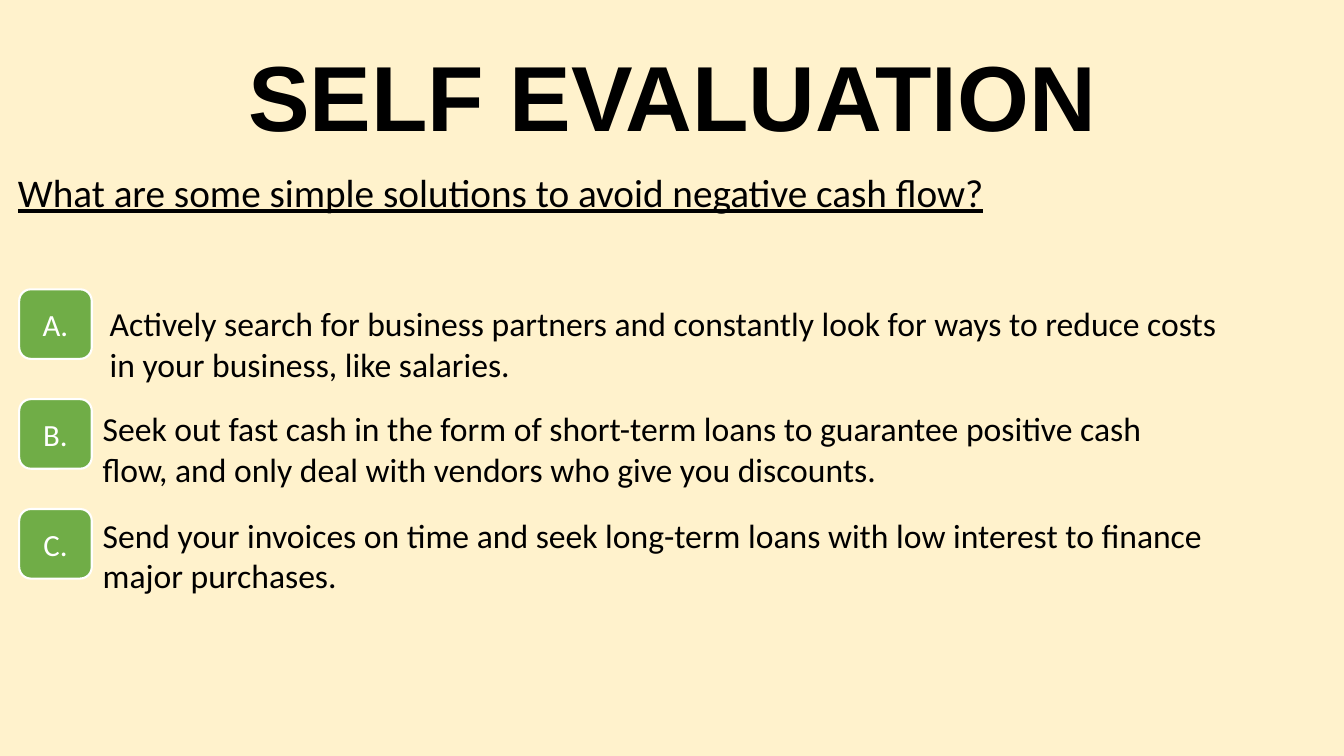
from pptx import Presentation
from pptx.dml.color import RGBColor
from pptx.enum.shapes import MSO_SHAPE
from pptx.enum.text import MSO_ANCHOR, MSO_AUTO_SIZE, PP_ALIGN
from pptx.util import Inches, Pt

CREAM = RGBColor(0xFF, 0xF2, 0xCC)
GREEN = RGBColor(0x70, 0xAD, 0x47)
WHITE = RGBColor(0xFF, 0xFF, 0xFF)
BLACK = RGBColor(0x00, 0x00, 0x00)

ROUND = MSO_SHAPE.ROUNDED_RECTANGLE
TOP, MIDDLE = MSO_ANCHOR.TOP, MSO_ANCHOR.MIDDLE
LEFT, CENTER = PP_ALIGN.LEFT, PP_ALIGN.CENTER
FIXED = MSO_AUTO_SIZE.NONE

# Grid of the answers, in inches
WIDE, HIGH = 13.33, 7.5
FIRST, PITCH = 2.87, 1.09
BADGE = (0.72, 0.69)
EDGE, TALL = 0.92, 0.91

# Letter, left and top shift from the grid, width, wording
ANSWERS = [
    ("A.", 0.07, 0.09, 11.43,
     "Actively search for business partners and constantly look for ways "
     "to reduce costs in your business, like salaries."),
    ("B.", 0, 0.04, 11.07,
     "Seek out fast cash in the form of short-term loans to guarantee "
     "positive cash flow, and only deal with vendors who give you discounts."),
    ("C.", 0, 0.01, 11.72,
     "Send your invoices on time and seek long-term loans with low interest "
     "to finance major purchases."),
]


def write(shape, text, size, color=BLACK, face="Calibri", align=LEFT,
          anchor=TOP):
    """Set the text of a shape and return its run's font."""
    frame = shape.text_frame
    frame.text = text
    frame.word_wrap = True
    frame.auto_size = FIXED
    frame.vertical_anchor = anchor
    para = frame.paragraphs[0]
    para.alignment = align
    font = para.runs[0].font
    font.name, font.size = face, Pt(size)
    font.color.rgb = color
    return font


def add_title(slide, text):
    title = slide.shapes.title
    title.left, title.top = Inches(EDGE), Inches(0.46)
    title.width, title.height = Inches(11.5), Inches(1.45)
    font = write(title, text, 66, face="Arial", align=CENTER)
    font.bold = True
    title.text_frame.paragraphs[0].line_spacing = 0.9


def add_text(slide, box, text, size):
    shape = slide.shapes.add_textbox(*map(Inches, box))
    return write(shape, text, size)


def add_badge(slide, top, letter):
    shape = slide.shapes.add_shape(ROUND, *map(Inches, (0.19, top, *BADGE)))
    shape.shadow.inherit = False
    shape.fill.solid()
    shape.fill.fore_color.rgb = GREEN
    shape.line.color.rgb = WHITE
    shape.line.width = Pt(1.5)
    write(shape, letter, 22, WHITE, align=CENTER, anchor=MIDDLE)


def main():
    deck = Presentation()
    deck.slide_width, deck.slide_height = Inches(WIDE), Inches(HIGH)
    slide = deck.slides.add_slide(deck.slide_layouts[5])
    slide.background.fill.solid()
    slide.background.fill.fore_color.rgb = CREAM

    # Heading and question
    add_title(slide, "SELF EVALUATION")
    font = add_text(
        slide, (0.08, 1.62, 10.02, 0.57),
        "What are some simple solutions to avoid negative cash flow?", 28)
    font.underline = True

    # Answers, one per row
    for row, (letter, right, down, width, text) in enumerate(ANSWERS):
        top = FIRST + row * PITCH
        add_badge(slide, top, letter)
        add_text(slide, (EDGE + right, top + down, width, TALL), text, 24)

    deck.save("out.pptx")


if __name__ == "__main__":
    main()
